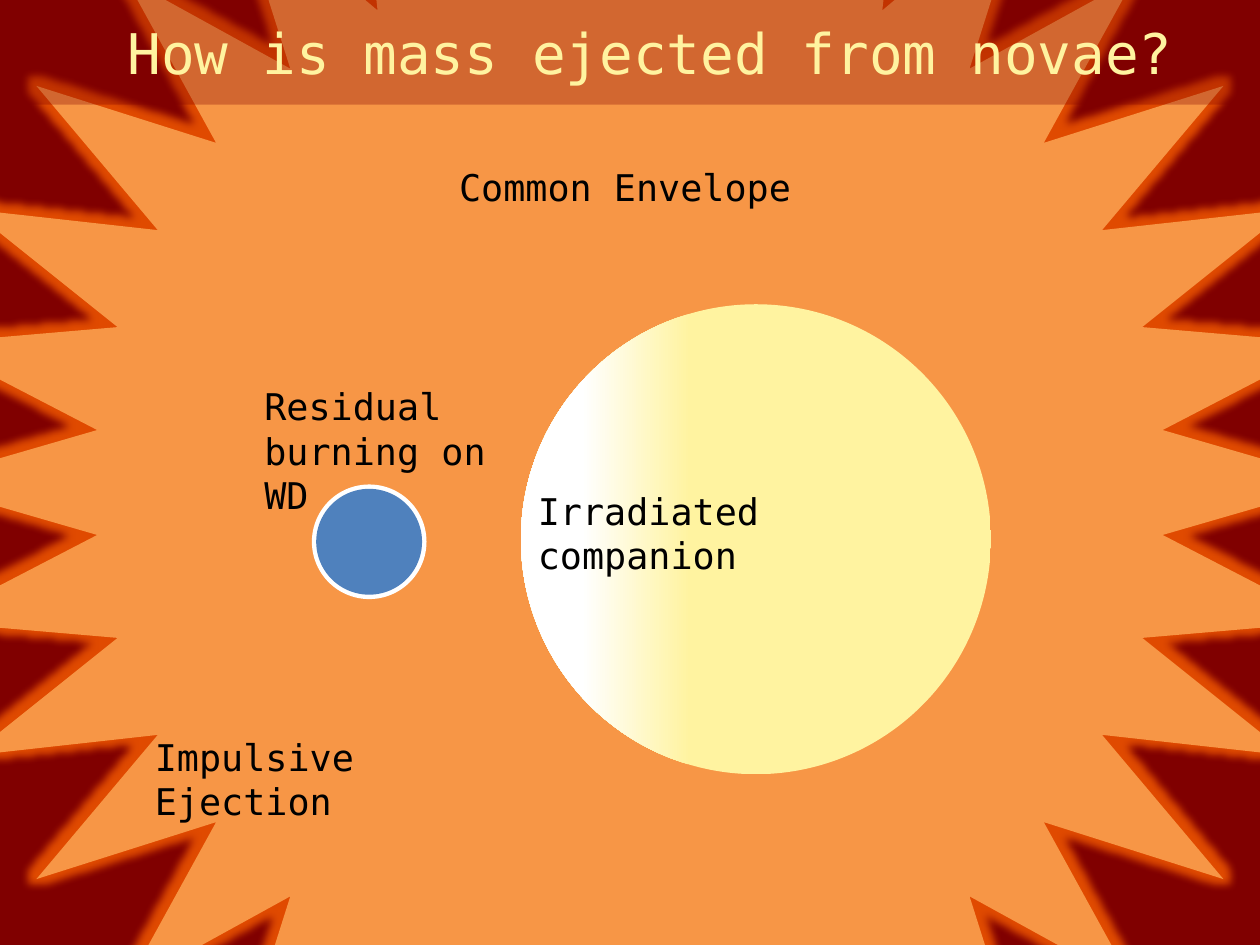
from lxml import etree
from pptx import Presentation
from pptx.dml.color import RGBColor
from pptx.enum.shapes import MSO_SHAPE
from pptx.enum.text import MSO_ANCHOR, MSO_AUTO_SIZE, PP_ALIGN
from pptx.oxml.ns import qn
from pptx.util import Inches, Pt

STAR, ELLIPSE = MSO_SHAPE.STAR_32_POINT, MSO_SHAPE.OVAL
LEFT, CENTER = PP_ALIGN.LEFT, PP_ALIGN.CENTER
MIDDLE, GROW = MSO_ANCHOR.MIDDLE, MSO_AUTO_SIZE.SHAPE_TO_FIT_TEXT
TITLE_ONLY = 5


def color(value):
    """Turn a hex string into a colour."""
    return RGBColor.from_string(value)


class NovaSlide:
    """Holds the style and the current slide, laid out on a 10 by 7.5 grid."""

    COLUMNS, ROWS = 10, 7.5
    FONT = "DejaVu Sans Mono"
    DARK, ORANGE, GLOW = "800000", "F79646", "E04A00"
    YELLOW, WHITE, BLUE, BLACK = "FFF3A0", "FFFFFF", "4F81BD", "000000"

    def __init__(self, presentation):
        """Add a title slide with a plain background."""
        self.width, self.height = presentation.slide_width, presentation.slide_height
        self.slide = presentation.slides.add_slide(presentation.slide_layouts[TITLE_ONLY])
        background = self.slide.background.fill
        background.solid()
        background.fore_color.rgb = color(self.DARK)

    def box(self, column, row, columns, rows):
        """Turn grid units into left, top, width and height."""
        across, down = self.width / self.COLUMNS, self.height / self.ROWS
        return [round(length) for length in
                (column * across, row * down, columns * across, rows * down)]

    def add_text(self, shape, text, size, hue, align):
        """Put one formatted paragraph into a shape."""
        paragraph = shape.text_frame.paragraphs[0]
        paragraph.alignment = align
        run = paragraph.add_run()
        run.text = text
        for name, value in {"name": self.FONT, "size": Pt(size)}.items():
            setattr(run.font, name, value)
        run.font.color.rgb = color(hue)

    def title(self, text, box, opacity):
        """Format the title placeholder as a translucent band."""
        shape = self.slide.shapes.title
        for name, value in zip(("left", "top", "width", "height"), self.box(*box)):
            setattr(shape, name, value)
        shape.fill.solid()
        shape.fill.fore_color.rgb = color(self.DARK)
        paint = shape.element.spPr.find(".//" + qn("a:srgbClr"))
        etree.SubElement(paint, qn("a:alpha"), val=str(opacity * 1000))
        shape.text_frame.vertical_anchor = MIDDLE
        self.add_text(shape, text, 32, self.YELLOW, CENTER)

    def round_shape(self, kind, column, row, diameter, fill):
        """Add a borderless shape around a centre point."""
        shape = self.slide.shapes.add_shape(
            kind, *self.box(column - diameter / 2, row - diameter / 2, diameter, diameter))
        shape.shadow.inherit = False
        shape.line.fill.background()
        shape.fill.solid()
        shape.fill.fore_color.rgb = color(fill)
        return shape

    def explosion(self, column, row, diameter, glow_points):
        """Add the glowing star behind everything else."""
        star = self.round_shape(STAR, column, row, diameter, self.ORANGE)
        effects = star.element.spPr.find(qn("a:effectLst"))
        glow = etree.SubElement(effects, qn("a:glow"), rad=str(int(Pt(glow_points))))
        etree.SubElement(glow, qn("a:srgbClr"), val=self.GLOW)
        self.slide.shapes.title.element.addprevious(star.element)

    def companion(self, column, row, diameter):
        """Add the companion star, lit from the left."""
        fill = self.round_shape(ELLIPSE, column, row, diameter, self.YELLOW).fill
        fill.gradient()
        fill.gradient_angle = 180
        stops = ((0.64, self.YELLOW), (0.87, self.WHITE))
        for stop, (position, hue) in zip(fill.gradient_stops, stops):
            stop.position = position
            stop.color.rgb = color(hue)

    def label(self, text, box, align=LEFT):
        """Add a wrapped text label."""
        shape = self.slide.shapes.add_textbox(*self.box(*box))
        for name, value in {"word_wrap": True, "auto_size": GROW}.items():
            setattr(shape.text_frame, name, value)
        self.add_text(shape, text, 21, self.BLACK, align)


def main():
    """Build the nova slide."""
    presentation = Presentation()
    presentation.slide_width, presentation.slide_height = Inches(10), Inches(7.5)
    nova = NovaSlide(presentation)
    nova.title("How is mass ejected from novae?", (-0.17, 0, 10.67, 0.83), 31)
    nova.explosion(5, 3.83, 11.33, 8)
    nova.companion(6, 4.28, 3.73)
    for diameter, fill in ((0.91, nova.WHITE), (0.84, nova.BLUE)):
        nova.round_shape(ELLIPSE, 2.93, 4.3, diameter, fill)
    nova.label("Irradiated companion", (4.17, 3.83, 2.25, 0.81))
    nova.label("Residual burning on WD", (2, 3, 2, 1.16))
    nova.label("Common Envelope", (3.42, 1.26, 3.08, 0.45), CENTER)
    nova.label("Impulsive Ejection", (1.13, 5.78, 1.78, 0.81))
    presentation.save("out.pptx")


if __name__ == "__main__":
    main()
